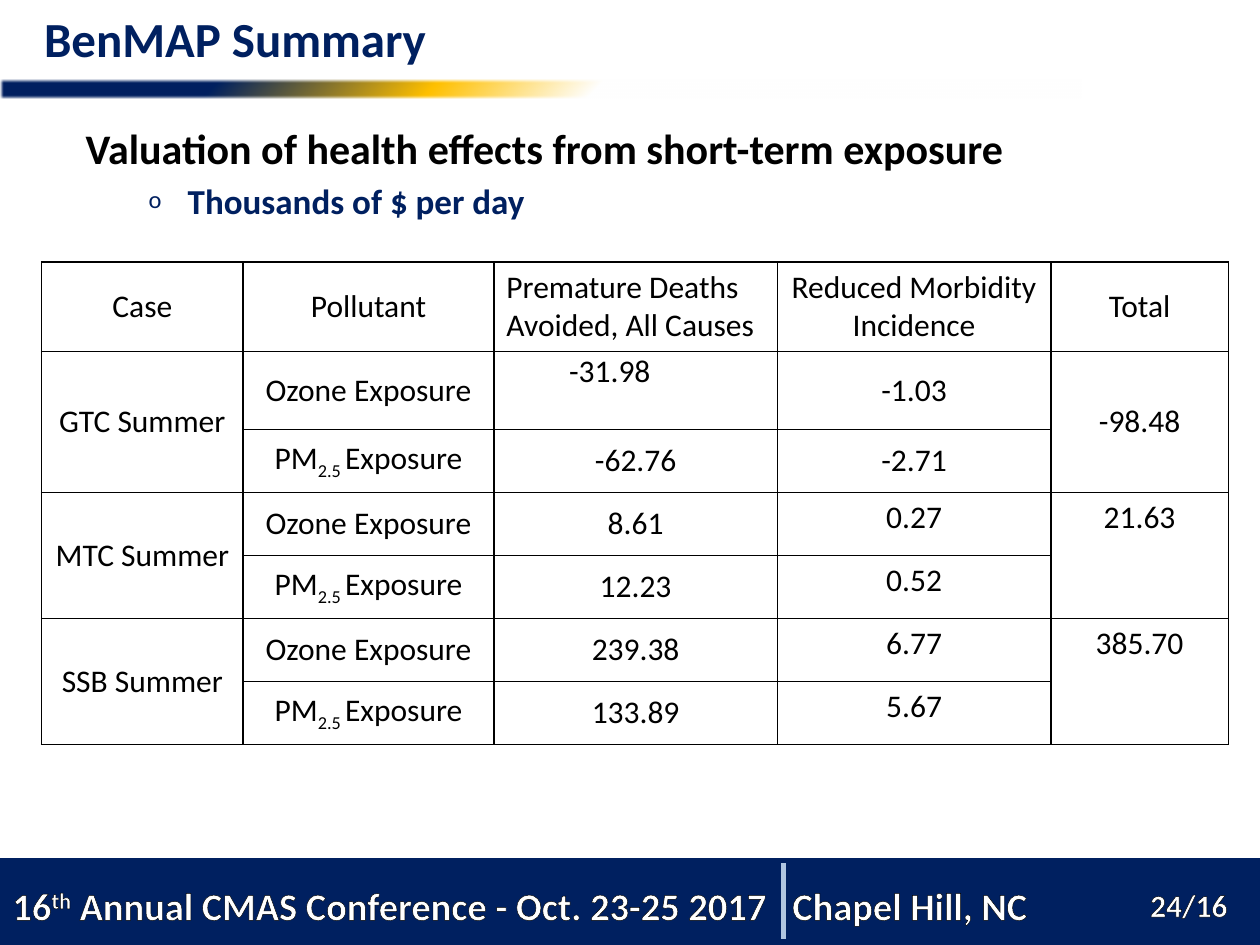
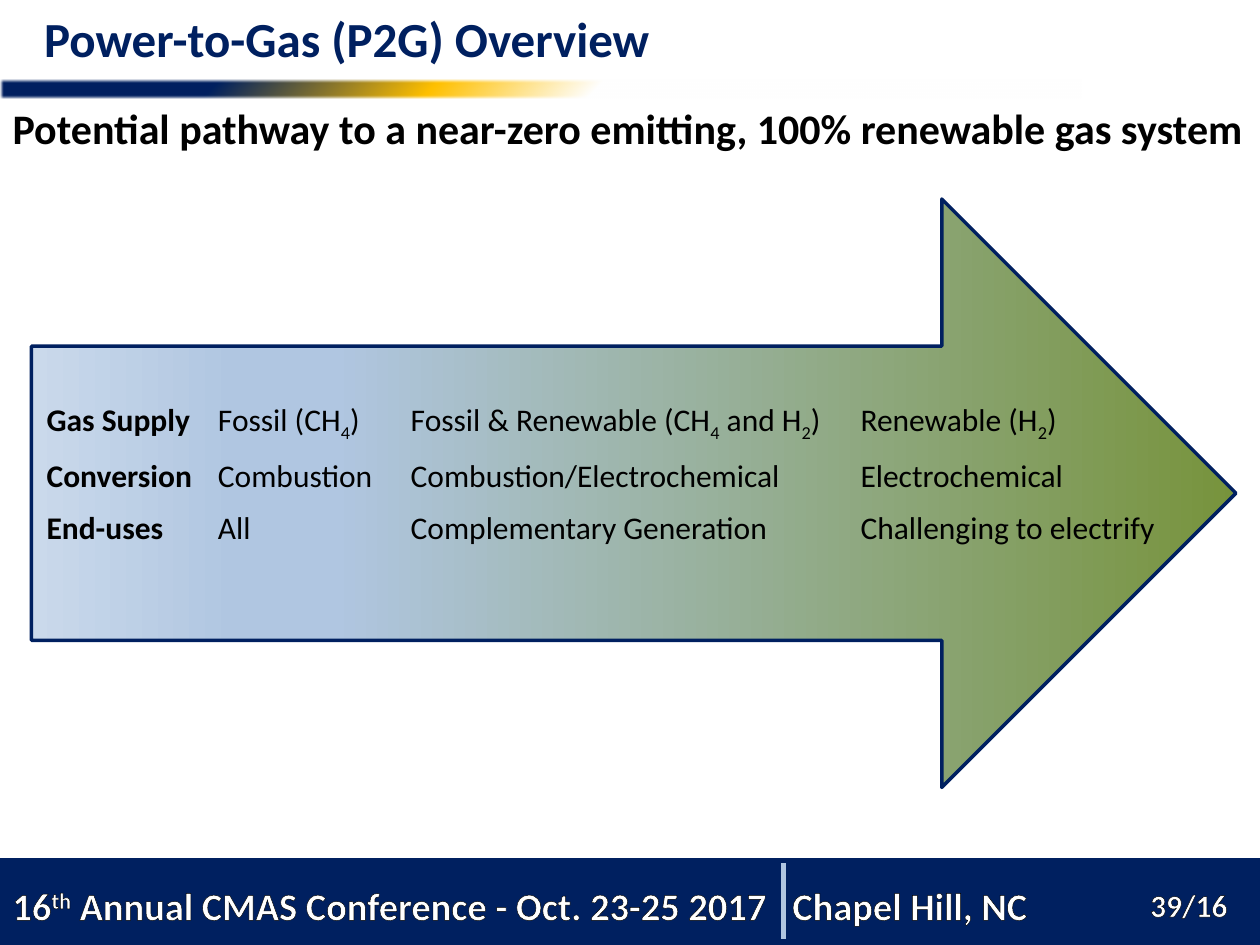
from lxml.etree import SubElement
from pptx import Presentation
from pptx.dml.color import RGBColor
from pptx.enum.shapes import MSO_CONNECTOR, MSO_SHAPE
from pptx.enum.text import MSO_ANCHOR, MSO_AUTO_SIZE, PP_ALIGN
from pptx.oxml import parse_xml
from pptx.oxml.ns import nsdecls, qn
from pptx.util import Pt

NAVY, GOLD, WHITE, BLACK = "002060", "FFC000", "FFFFFF", "000000"
PALE_BLUE, LIGHT_BLUE, GREEN = "CAD9EB", "B0C6E1", "77933C"
FONT = "Calibri"
PLAIN_TABLE_STYLE = "{2D5ABB26-0587-4C30-8999-92F81FD0307C}"


def write(paragraph, text, size, colour, bold=False, shift=-25):
    for index, piece in enumerate(text.split("~")):
        span = paragraph.add_run()
        span.text = piece
        if index % 2:
            span.font._element.set("baseline", str(shift * 1000))
    paragraph.font.name = FONT
    paragraph.font.size = Pt(size)
    paragraph.font.bold = bold
    paragraph.font.color.rgb = RGBColor.from_string(colour)


def shade(shape, angle, stops):
    shape.fill.gradient()
    shape.fill.gradient_angle = angle
    stop_list = shape._element.spPr.find(qn("a:gradFill")).find(qn("a:gsLst"))
    for old_stop in list(stop_list):
        stop_list.remove(old_stop)
    for position, colour in stops:
        stop = SubElement(stop_list, qn("a:gs"), pos=str(position * 1000))
        SubElement(stop, qn("a:srgbClr"), val=colour)


deck = Presentation()
deck.slide_width = 9144000
deck.slide_height = 6858000
column = deck.slide_width // 1000
row = deck.slide_height // 750

pages = []
for title, number, body_area in [
    ("BenMAP Summary", "24/16", (58, 92, 867, 495)),
    ("Power-to-Gas (P2G) Overview", "39/16", (0, 76, 1000, 154)),
]:
    page = deck.slides.add_slide(deck.slide_layouts[1])
    pages.append(page)

    heading = page.shapes.title
    heading.left, heading.top = 25 * column, -13 * row
    heading.width, heading.height = 950 * column, 86 * row
    heading.text_frame.vertical_anchor = MSO_ANCHOR.MIDDLE
    heading.text_frame.auto_size = MSO_AUTO_SIZE.NONE
    paragraph = heading.text_frame.paragraphs[0]
    paragraph.alignment = PP_ALIGN.LEFT
    write(paragraph, title, 28, NAVY, True)

    body = page.placeholders[1]
    left, top, width, height = body_area
    body.left, body.top = left * column, top * row
    body.width, body.height = width * column, height * row
    body.text_frame.auto_size = MSO_AUTO_SIZE.NONE
    body.text_frame.margin_right = 0

    band = page.shapes.add_shape(MSO_SHAPE.RECTANGLE, 0, 681 * row, deck.slide_width, 69 * row)
    band.fill.solid()
    band.fill.fore_color.rgb = RGBColor.from_string(NAVY)
    rule = page.shapes.add_shape(MSO_SHAPE.RECTANGLE, 0, 63 * row, 858 * column, 15 * row)
    shade(rule, 135, [(45, WHITE), (60, GOLD), (80, NAVY), (85, NAVY)])
    for shape in (band, rule):
        shape.line.fill.background()
        shape.shadow.inherit = False
    SubElement(rule._element.spPr.find(qn("a:effectLst")), qn("a:softEdge"), rad="12700")

    for text, left, top, width, height, size in [
        ("16~th~ Annual CMAS Conference - Oct. 23-25 2017\tChapel Hill, NC", 0, 695, 892, 47, 22),
        (number, 903, 698, 97, 40, 18),
    ]:
        box = page.shapes.add_textbox(left * column, top * row, width * column, height * row)
        box.text_frame.word_wrap = True
        paragraph = box.text_frame.paragraphs[0]
        if "\t" in text:
            tabs = SubElement(paragraph._p.get_or_add_pPr(), qn("a:tabLst"))
            SubElement(tabs, qn("a:tab"), pos=str(619 * column), algn="l")
        write(paragraph, text, size, WHITE, True, 30)
        for span in paragraph.runs:
            span.font._element.insert(0, parse_xml(
                f'<a:ln {nsdecls("a")} w="9525"><a:solidFill>'
                f'<a:srgbClr val="{BLACK}"/></a:solidFill></a:ln>'))

    divider = page.shapes.add_connector(
        MSO_CONNECTOR.STRAIGHT, 622 * column, 685 * row, 622 * column, 745 * row)
    divider.line.color.rgb = RGBColor.from_string(LIGHT_BLUE)
    divider.line.width = Pt(2.5)
    SubElement(divider._element.spPr, qn("a:effectLst"))

summary, overview = pages

for page, statement in [
    (summary, "Valuation of health effects from short-term exposure"),
    (overview, "Potential pathway to a near-zero emitting, 100% renewable gas system"),
]:
    paragraph = page.placeholders[1].text_frame.paragraphs[0]
    paragraph.space_before = Pt(0)
    properties = paragraph._p.get_or_add_pPr()
    properties.set("marL", "0")
    properties.set("indent", "0")
    SubElement(properties, qn("a:buNone"))
    write(paragraph, statement, 24, BLACK, True)

unit_line = summary.placeholders[1].text_frame.add_paragraph()
unit_line.level = 1
unit_line.space_before = Pt(4)
properties = unit_line._p.get_or_add_pPr()
properties.set("marL", str(81 * column))
properties.set("indent", str(-31 * column))
SubElement(properties, qn("a:buSzPct"), val="70000")
SubElement(properties, qn("a:buFont"), typeface=FONT)
SubElement(properties, qn("a:buChar"), char="o")
write(unit_line, "Thousands of $ per day", 20, NAVY, True)

arrow = overview.shapes.add_shape(
    MSO_SHAPE.RIGHT_ARROW, 25 * column, 158 * row, 956 * column, 467 * row)
arrow.shadow.inherit = False
shade(arrow, 180, [(0, GREEN), (75, LIGHT_BLUE), (83, LIGHT_BLUE), (100, PALE_BLUE)])
arrow.line.color.rgb = RGBColor.from_string(NAVY)
arrow.line.width = Pt(2)

OZONE, PARTICLES = "Ozone Exposure", "PM~2.5 ~Exposure"
valuation = [
    ["Case", "Pollutant", "Premature Deaths Avoided, All Causes",
     "Reduced Morbidity Incidence", "Total"],
    ["GTC Summer", OZONE, "-31.98", "-1.03", "-98.48"],
    ["", PARTICLES, "-62.76", "-2.71", ""],
    ["MTC Summer", OZONE, "8.61", "0.27", "21.63"],
    ["", PARTICLES, "12.23", "0.52", ""],
    ["SSB Summer", OZONE, "239.38", "6.77", "385.70"],
    ["", PARTICLES, "133.89", "5.67", ""],
]
pathway = [
    ["Gas Supply", "Fossil (CH~4~)", "Fossil & Renewable (CH~4~ and H~2~)", "Renewable (H~2~)"],
    ["Conversion", "Combustion", "Combustion/Electrochemical", "Electrochemical"],
    ["End-uses", "All", "Complementary Generation", "Challenging to electrify"],
]

tables = []
for page, content, left, top, widths, heights in [
    (summary, valuation, 33, 208, [160, 199, 225, 217, 141], [71, 62] + [50] * 5),
    (overview, pathway, 27, 314, [136, 153, 357, 270], [44, 41, 40]),
]:
    table = page.shapes.add_table(
        len(heights), len(widths), left * column, top * row,
        sum(widths) * column, sum(heights) * row).table
    tables.append(table)
    table.first_row = table.horz_banding = False
    table._tbl.tblPr.find(qn("a:tableStyleId")).text = PLAIN_TABLE_STYLE
    for index, width in enumerate(widths):
        table.columns[index].width = width * column
    for index, height in enumerate(heights):
        table.rows[index].height = height * row
    for line, texts in enumerate(content):
        for place, text in enumerate(texts):
            cell = table.cell(line, place)
            cell.fill.background()
            if text:
                bold = content is pathway and place == 0
                write(cell.text_frame.paragraphs[0], text, 18, BLACK, bold)

valuation_table = tables[0]
for line, texts in enumerate(valuation):
    for place in range(len(texts)):
        cell = valuation_table.cell(line, place)
        at_top = line >= 3 and place >= 3
        cell.vertical_anchor = MSO_ANCHOR.TOP if at_top else MSO_ANCHOR.MIDDLE
        if (line, place) != (0, 2):
            cell.text_frame.paragraphs[0].alignment = PP_ALIGN.CENTER
        for index, side in enumerate(["lnL", "lnR", "lnT", "lnB"]):
            cell._tc.get_or_add_tcPr().insert(index, parse_xml(
                f'<a:{side} {nsdecls("a")} w="12700"><a:solidFill>'
                f'<a:srgbClr val="{BLACK}"/></a:solidFill></a:{side}>'))

for line in (1, 3, 5):
    for place in (0, 4):
        valuation_table.cell(line, place).merge(valuation_table.cell(line + 1, place))

ozone_deaths = valuation_table.cell(1, 2)
ozone_deaths.vertical_anchor = MSO_ANCHOR.TOP
ozone_deaths.margin_left = column
ozone_deaths.margin_top = row
ozone_deaths.margin_right = 42 * column

deck.save("out.pptx")
